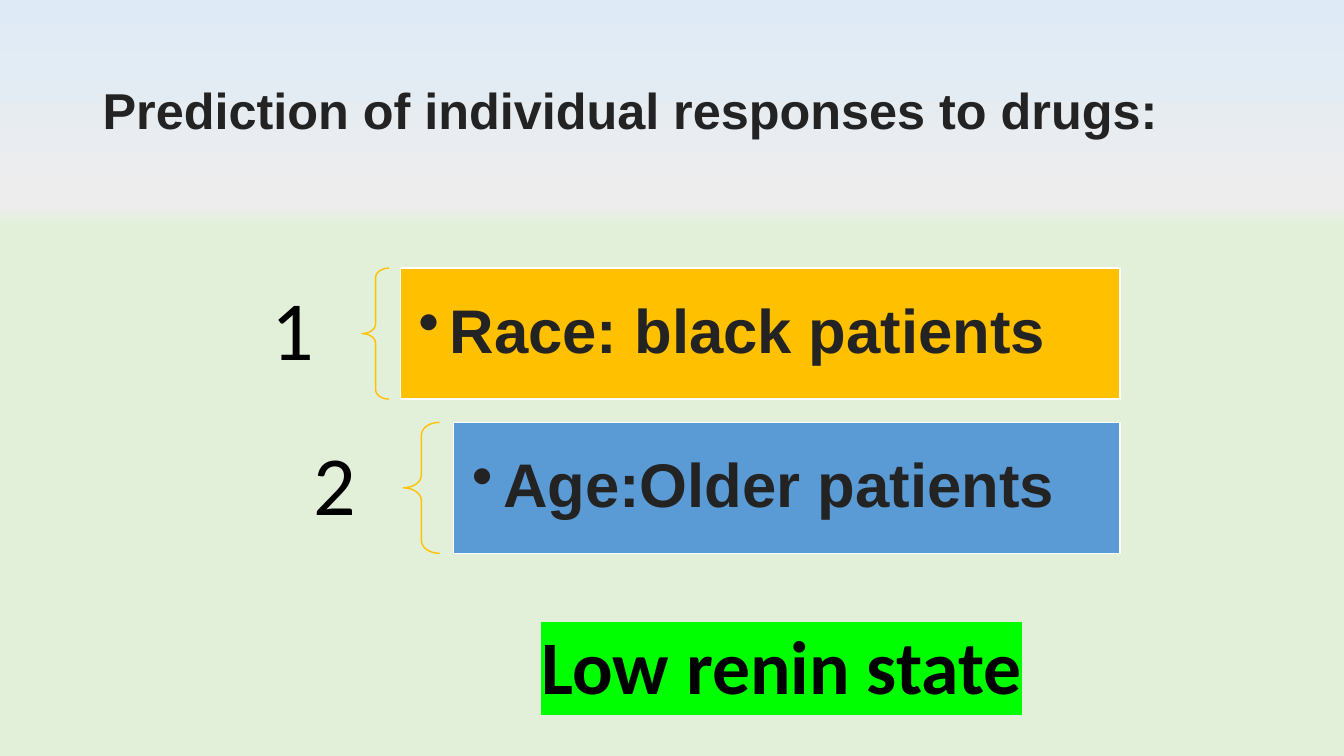
import copy
import pptx
import pptx.util
import pptx.dml.color
import pptx.enum.shapes
import pptx.enum.text
import pptx.oxml

Inches = pptx.util.Inches
Pt = pptx.util.Pt
SHAPE = pptx.enum.shapes.MSO_SHAPE
ALIGN = pptx.enum.text.PP_ALIGN
ANCHOR = pptx.enum.text.MSO_ANCHOR
NS = 'xmlns:a="http://schemas.openxmlformats.org/drawingml/2006/main"'
WIDE, HIGH = 13.33, 7.5
DARK, GOLD = "232323", "FFC000"


def color(code):
    return pptx.dml.color.RGBColor.from_string(code)


def place(box):
    return [Inches(part) for part in box]


def backdrop(slide, stops):
    fill = slide.background.fill
    fill.gradient()
    fill.gradient_angle = 270
    first = fill.gradient_stops[0]
    group = slide.element.xpath(".//a:gsLst")[0]
    group.insert(1, copy.deepcopy(group[0]))
    for stop, (share, code) in zip(fill.gradient_stops, stops):
        stop.position = share
        stop.color.rgb = color(code)


def write(shape, words, size, font, code, bold=False, pad=(0.1, 0.05),
          align=ALIGN.LEFT, anchor=ANCHOR.MIDDLE, lead=0.9, bullet=False):
    frame = shape.text_frame
    frame.word_wrap = True
    frame.vertical_anchor = anchor
    frame.margin_left = frame.margin_right = Inches(pad[0])
    frame.margin_top = frame.margin_bottom = Inches(pad[1])
    para = frame.paragraphs[0]
    para.alignment = align
    para.line_spacing = lead
    if bullet:
        props = para._p.get_or_add_pPr()
        props.set("marL", str(Inches(0.31)))
        props.set("indent", str(-Inches(0.31)))
        props.append(pptx.oxml.parse_xml(f'<a:buChar {NS} char="•"/>'))
    run = para.add_run()
    run.text = words
    run.font.size = Pt(size)
    run.font.name = font
    run.font.bold = bold
    run.font.color.rgb = color(code)


def outline(shape, code):
    shape.shadow.inherit = False
    shape.line.color.rgb = color(code)
    shape.line.width = Pt(1)


def title(slide, box, words):
    label = slide.shapes.add_textbox(*place(box))
    write(label, words, 36, "Arial", DARK, bold=True)


def factor(slide, box, number, words, fill, start, brace, bar):
    left, top, width, height = box
    label = slide.shapes.add_textbox(*place((left, top, start - left, height)))
    write(label, number, 60, "Calibri", "000000", pad=(0.47, 0.17), align=ALIGN.RIGHT)

    curve = slide.shapes.add_shape(SHAPE.LEFT_BRACE, *place((start, top, brace, height)))
    curve.adjustments[0] = 0.35
    curve.adjustments[1] = 0.5
    curve.fill.background()
    outline(curve, GOLD)

    panel = slide.shapes.add_shape(
        SHAPE.RECTANGLE, *place((bar, top, left + width - bar, height)))
    panel.fill.solid()
    panel.fill.fore_color.rgb = color(fill)
    outline(panel, "FFFFFF")
    write(panel, words, 44, "Arial", DARK, bold=True, pad=(0.18, 0.18), bullet=True)


def result(slide, box, words):
    label = slide.shapes.add_textbox(*place(box))
    write(label, words, 54, "Calibri", "000000", bold=True, anchor=ANCHOR.TOP, lead=1.0)
    mark = pptx.oxml.parse_xml(
        f'<a:highlight {NS}><a:srgbClr val="00FF00"/></a:highlight>')
    label.element.xpath(".//a:latin")[0].addprevious(mark)


def main():
    deck = pptx.Presentation()
    deck.slide_width = Inches(WIDE)
    deck.slide_height = Inches(HIGH)
    slide = deck.slides.add_slide(deck.slide_layouts[6])
    backdrop(slide, [(0, "DEEBF7"), (0.27, "EDEDED"), (0.3, "E2F0D9")])
    title(slide, (0.92, 0.4, 11.5, 1.45), "Prediction of individual responses to drugs:")
    factors = [
        ("1", "Race: black patients", GOLD, 3.59, 0.27, 3.97),
        ("2", "Age:Older patients", "5B9BD5", 4, 0.36, 4.5),
    ]
    for row, parts in enumerate(factors):
        factor(slide, (2.22, 2.66 + row * 1.53, 8.89, 1.3), *parts)
    result(slide, (5.27, 6.09, 6.95, 1.01), "Low renin state")
    deck.save("out.pptx")


if __name__ == "__main__":
    main()
